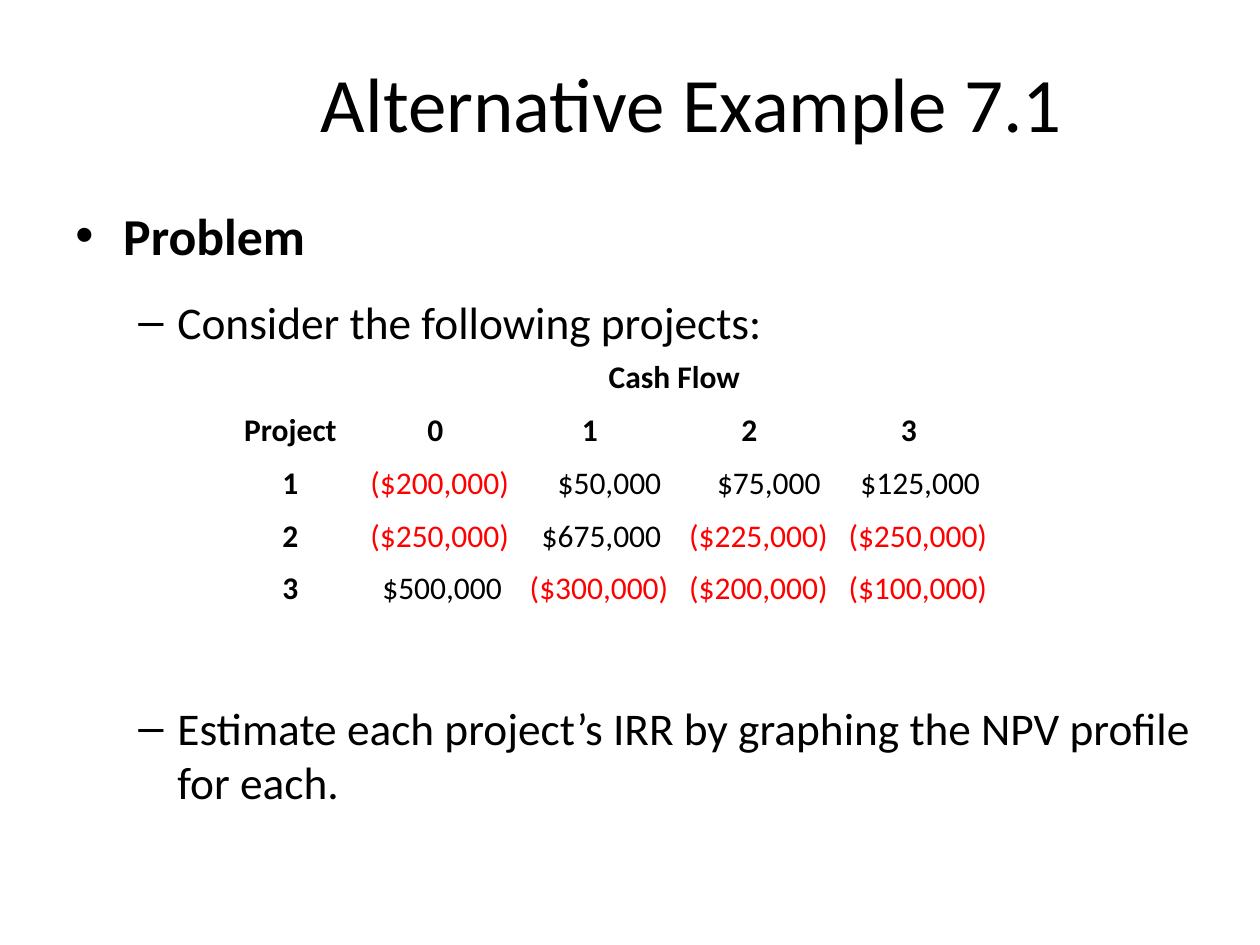
"""Build the slide for Alternative Example 7.1 on project cash flows."""
from lxml import etree
from pptx import Presentation, util as u
from pptx.dml.color import RGBColor
from pptx.enum import text
from pptx.oxml.ns import qn

BLACK = RGBColor(0x00, 0x00, 0x00)
RED = RGBColor(0xFF, 0x00, 0x00)
FONT = "Calibri"
WIDTH, HEIGHT = u.Inches(10), u.Inches(7.5)

COLUMN_SHARES = [11.1, 11.9, 12.65, 12.65, 12.65]
ROW_SHARE = 5.6
PERIODS = ["Project", "0", "1", "2", "3"]
PROJECTS = [
    ["1", "($200,000)", "$50,000 ", "$75,000 ", "$125,000 "],
    ["2", "($250,000)", "$675,000 ", "($225,000)", "($250,000)"],
    ["3", "$500,000 ", "($300,000)", "($200,000)", "($100,000)"],
]


def across(percent):
    """Return a percentage of the slide's width."""
    return u.Emu(round(WIDTH * percent / 100))


def down(percent):
    """Return a percentage of the slide's height."""
    return u.Emu(round(HEIGHT * percent / 100))


def style(para, size, bold=False, color=BLACK):
    """Set the font of a whole paragraph."""
    para.font.name = FONT
    para.font.size = u.Pt(size)
    para.font.bold = bold
    para.font.color.rgb = color


def add_box(page, left, top, width, height):
    """Add a wrapping text box placed by shares and return its frame."""
    box = page.shapes.add_textbox(across(left), down(top), across(width), down(height))
    box.text_frame.word_wrap = True
    return box.text_frame


def add_title(page, wording):
    """Add the centred slide title."""
    frame = add_box(page, 12.8, 2.5, 84.2, 16.6)
    frame.vertical_anchor = text.MSO_ANCHOR.MIDDLE
    para = frame.paragraphs[0]
    para.text = wording
    para.alignment = text.PP_ALIGN.CENTER
    style(para, 44)


def write_bullet(para, wording, mark, indent, hanging, size, bold=False, before=0):
    """Write a paragraph with a hanging bullet mark."""
    para.text = wording
    para.space_before = u.Pt(before)
    properties = para._p.get_or_add_pPr()
    properties.set("marL", str(across(indent)))
    properties.set("indent", str(-across(hanging)))
    face = etree.SubElement(properties, qn("a:buFont"))
    face.set("typeface", "Arial")
    bullet = etree.SubElement(properties, qn("a:buChar"))
    bullet.set("char", mark)
    style(para, size, bold)


def add_problem(page):
    """Add the problem heading and its two steps around the table."""
    frame = add_box(page, 5, 20.88, 91.7, 67.7)
    write_bullet(frame.paragraphs[0], "Problem", "•", 3.8, 3.8, 29.6, bold=True)
    steps = [
        ("Consider the following projects:", 16),
        ("Estimate each project’s IRR by graphing the NPV profile for each.", 201),
    ]
    for wording, before in steps:
        para = frame.add_paragraph()
        para.level = 1
        write_bullet(para, wording, "–", 8.1, 3.1, 25.9, before=before)


def clear_borders(cell):
    """Remove the lines on all four sides of a cell."""
    properties = cell._tc.get_or_add_tcPr()
    for position, side in enumerate(("a:lnL", "a:lnR", "a:lnT", "a:lnB")):
        line = etree.Element(qn(side), w="0")
        etree.SubElement(line, qn("a:noFill"))
        properties.insert(position, line)


def fill_cell(cell, wording, heading):
    """Write a heading or an amount, with negative amounts in red."""
    cell.fill.background()
    clear_borders(cell)
    cell.vertical_anchor = text.MSO_ANCHOR.BOTTOM
    cell.margin_left = cell.margin_right = cell.margin_top = u.Inches(0.01)
    cell.margin_bottom = 0
    para = cell.text_frame.paragraphs[0]
    para.text = wording
    para.alignment = text.PP_ALIGN.CENTER if heading else text.PP_ALIGN.RIGHT
    style(para, 18, heading, RED if wording.startswith("(") else BLACK)


def add_cash_flows(page):
    """Add the table of cash flows by project and period."""
    rows = [["", "Cash Flow", "", "", ""], PERIODS, *PROJECTS]
    frame = page.shapes.add_table(
        len(rows), len(PERIODS), across(17.5), down(36.4),
        across(sum(COLUMN_SHARES)), down(ROW_SHARE * len(rows)))
    table = frame.table
    table.first_row = table.horz_banding = False
    style_id = table._tbl.tblPr.find(qn("a:tableStyleId"))
    style_id.text = "{2D5ABB26-0587-4C30-8999-92F81FD0307C}"
    for column, share in zip(table.columns, COLUMN_SHARES):
        column.width = across(share)
    for row_index, row in enumerate(rows):
        for column_index, wording in enumerate(row):
            heading = row_index < 2 or column_index == 0
            fill_cell(table.cell(row_index, column_index), wording, heading)
    table.cell(0, 1).merge(table.cell(0, len(PERIODS) - 1))


def main():
    """Build and save the deck."""
    deck = Presentation()
    deck.slide_width, deck.slide_height = WIDTH, HEIGHT
    page = deck.slides.add_slide(deck.slide_layouts[6])
    add_title(page, "Alternative Example 7.1")
    add_problem(page)
    add_cash_flows(page)
    deck.save("out.pptx")


if __name__ == "__main__":
    main()
